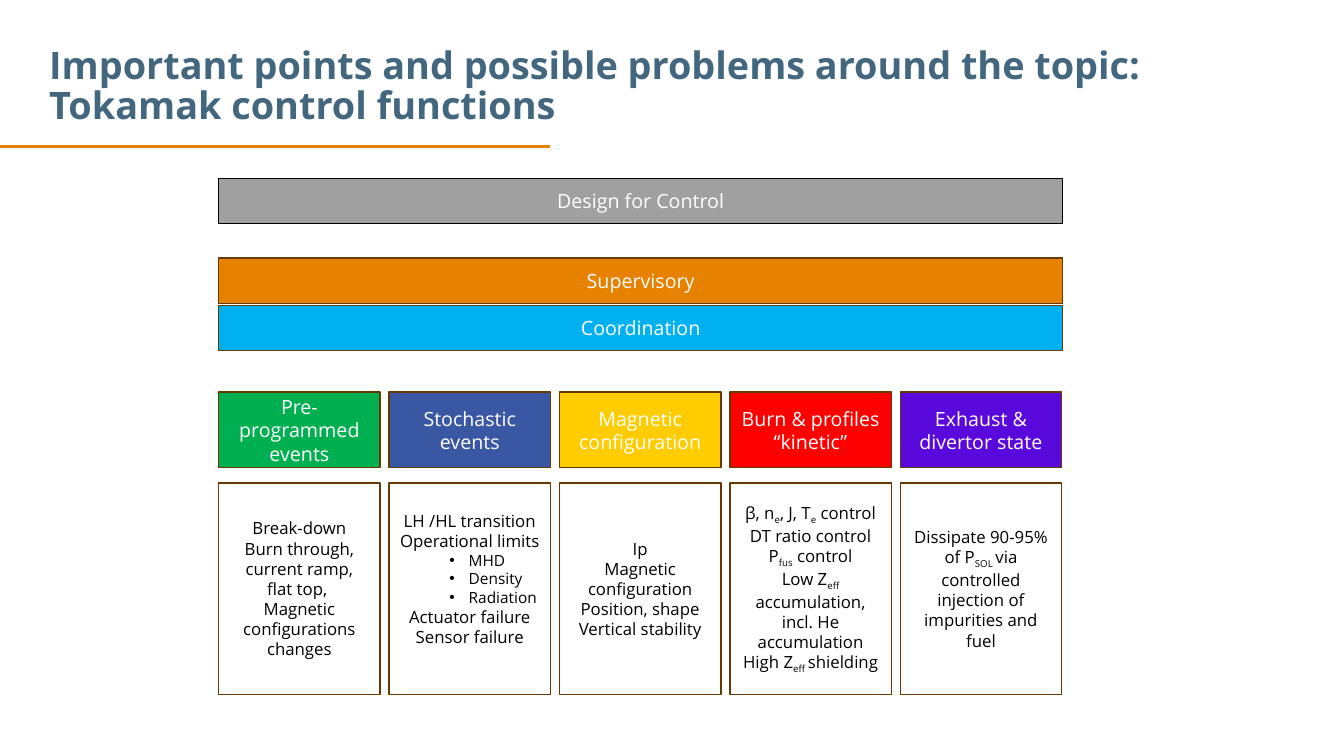
from lxml.etree import SubElement
from pptx import Presentation
from pptx.dml.color import RGBColor
from pptx.enum.shapes import MSO_CONNECTOR, MSO_SHAPE
from pptx.enum.text import MSO_ANCHOR, PP_ALIGN
from pptx.oxml.ns import qn
from pptx.util import Pt

PX = 9144  # EMU per px, 100 px to the inch
FONT = "Open Sans"
COLORS = {
    "title": "42677F", "orange": "E68200", "brown": "653900", "gray": "A0A0A0",
    "sky": "00B0F0", "green": "00B050", "blue": "3957A3", "yellow": "FFCC00",
    "red": "FF0000", "violet": "5A09DD", "white": "FFFFFF", "black": "000000",
}

TITLE = ["Important points and possible problems around the topic:",
         "Tokamak control functions"]
# text, top, fill, outline
BARS = [
    ("Design for Control", 177, "gray", "black"),
    ("Supervisory", 256, "orange", "brown"),
    ("Coordination", 303, "sky", "brown"),
]
# heading lines, fill, detail lines; text between bars is subscript
COLUMNS = [
    (["Pre-programmed events"], "green",
     ["Break-down", "Burn through, current ramp,", "flat top, ",
      "Magnetic configurations changes"]),
    (["Stochastic events"], "blue",
     ["LH /HL transition", "Operational limits", "•MHD", "•Density", "•Radiation",
      "Actuator failure", "Sensor failure"]),
    (["Magnetic configuration"], "yellow",
     ["Ip", "Magnetic configuration", "Position, shape", "Vertical stability"]),
    (["Burn & profiles", "“kinetic”"], "red",
     ["β, n|e|, J, T|e| control", "DT ratio control", "P|fus| control",
      "Low Z|eff |accumulation, incl. He accumulation", "High Z|eff |shielding"]),
    (["Exhaust & divertor state"], "violet",
     ["Dissipate 90-95% of P|SOL |via controlled injection of impurities and fuel"]),
]

LEFT, BAR_WIDTH, BAR_HEIGHT = 217, 837, 45
COLUMN_WIDTH, COLUMN_PITCH = 160, 169
HEADING_TOP, HEADING_HEIGHT = 389, 75
DETAIL_TOP, DETAIL_HEIGHT = 479, 210
BULLET_INDENT, BULLET_HANG = 69, 19
RAISED_MARGIN = 25  # bottom inset that lifts the bulleted text


def rgb(name):
    return RGBColor.from_string(COLORS[name])


def style(font, size, color, bold=False):
    font.name, font.size, font.bold = FONT, Pt(size), bold
    font.color.rgb = rgb(color)


def add_bullet(para):
    properties = para._p.get_or_add_pPr()
    properties.set("marL", str(BULLET_INDENT * PX))
    properties.set("indent", str(-BULLET_HANG * PX))
    SubElement(properties, qn("a:buFont")).set("typeface", "Arial")
    SubElement(properties, qn("a:buChar")).set("char", "•")


def write_line(para, line, size, color):
    if line.startswith("•"):
        add_bullet(para)
        para.alignment = PP_ALIGN.LEFT
        line, size = line[1:], size - 1
    else:
        para.alignment = PP_ALIGN.CENTER
    for index, part in enumerate(line.split("|")):
        span = para.add_run()
        span.text = part
        style(span.font, size, color)
        if index % 2:
            span._r.get_or_add_rPr().set("baseline", "-25000")


def add_box(slide, bounds, lines, fill, outline, size, color):
    box = slide.shapes.add_shape(MSO_SHAPE.RECTANGLE, *[n * PX for n in bounds])
    box.shadow.inherit = False
    box.fill.solid()
    box.fill.fore_color.rgb = rgb(fill)
    box.line.color.rgb = rgb(outline)
    box.line.width = Pt(1)
    frame = box.text_frame
    frame.word_wrap = True
    frame.vertical_anchor = MSO_ANCHOR.MIDDLE
    for index, line in enumerate(lines):
        para = frame.add_paragraph() if index else frame.paragraphs[0]
        write_line(para, line, size, color)
    return box


def add_title(slide):
    box = slide.shapes.add_textbox(39 * PX, 8 * PX, 1197 * PX, 124 * PX)
    frame = box.text_frame
    frame.word_wrap = True
    frame.vertical_anchor = MSO_ANCHOR.BOTTOM
    para = frame.paragraphs[0]
    para.line_spacing = 0.9
    for index, line in enumerate(TITLE):
        if index:
            para.add_line_break()
        span = para.add_run()
        span.text = line
        style(span.font, 27, "title", bold=True)

    rule = slide.shapes.add_connector(
        MSO_CONNECTOR.STRAIGHT, 0, 145 * PX, 545 * PX, 145 * PX)
    rule.line.color.rgb = rgb("orange")
    rule.line.width = Pt(2)
    SubElement(rule._element.spPr, qn("a:effectLst"))


def main():
    deck = Presentation()
    deck.slide_width, deck.slide_height = 1333 * PX, 750 * PX
    slide = deck.slides.add_slide(deck.slide_layouts[6])
    add_title(slide)

    for text, top, fill, outline in BARS:
        add_box(slide, (LEFT, top, BAR_WIDTH, BAR_HEIGHT), [text],
                fill, outline, 14, "white")

    for index, (heading, fill, details) in enumerate(COLUMNS):
        left = LEFT + index * COLUMN_PITCH
        add_box(slide, (left, HEADING_TOP, COLUMN_WIDTH, HEADING_HEIGHT), heading,
                fill, "brown", 14, "white")
        box = add_box(slide, (left, DETAIL_TOP, COLUMN_WIDTH, DETAIL_HEIGHT), details,
                      "white", "brown", 12, "black")
        if any(line.startswith("•") for line in details):
            box.text_frame.margin_bottom = RAISED_MARGIN * PX

    deck.save("out.pptx")


if __name__ == "__main__":
    main()
